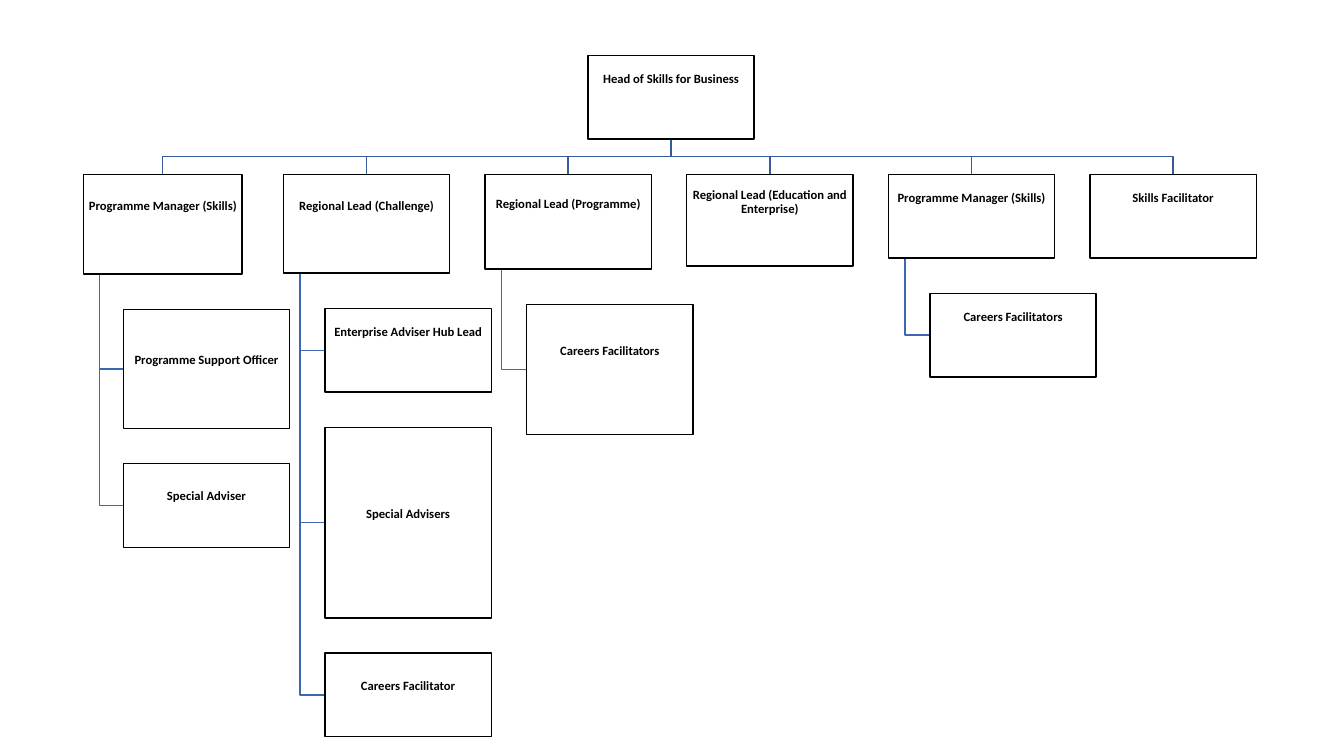
from pptx import Presentation
from pptx.dml.color import RGBColor
from pptx.enum.shapes import MSO_SHAPE
from pptx.enum.text import MSO_ANCHOR, PP_ALIGN
from pptx.util import Inches, Pt

BOX_WIDTH, BOX_HEIGHT, GAP = 1.65, 0.83, 0.35
PITCH = BOX_WIDTH + GAP
FIRST_LEFT, HEAD_LEFT, HEAD_TOP = 0.81, 5.83, 0.55
TEXT_LIFT = 0.18
BLACK, TRUNK_BLUE, BRANCH_BLUE = "000000", "365B9D", "3E67B2"

presentation = Presentation()
presentation.slide_width = Inches(13.33)
presentation.slide_height = Inches(7.5)
slide = presentation.slides.add_slide(presentation.slide_layouts[6])


def outline(shape, color):
    shape.shadow.inherit = False
    shape.fill.background()
    shape.line.color.rgb = RGBColor.from_string(color)
    shape.line.width = Pt(1)


def add_box(label, left, top, width, height, lift):
    box = slide.shapes.add_shape(
        MSO_SHAPE.RECTANGLE, Inches(left), Inches(top), Inches(width), Inches(height))
    outline(box, BLACK)
    frame = box.text_frame
    frame.word_wrap = True
    frame.vertical_anchor = MSO_ANCHOR.MIDDLE
    frame.margin_left = frame.margin_right = frame.margin_top = Inches(0.01)
    frame.margin_bottom = Inches(lift * TEXT_LIFT)
    paragraph = frame.paragraphs[0]
    paragraph.text = label
    paragraph.alignment = PP_ALIGN.CENTER
    paragraph.line_spacing = 0.9
    paragraph.font.name = "Calibri"
    paragraph.font.size = Pt(9)
    paragraph.font.bold = True
    paragraph.font.color.rgb = RGBColor.from_string(BLACK)


teams = [
    ("Programme Manager (Skills)", 0.83, 1.57, 0.99, [
        ("Programme Support Officer", 1.18, 1),
        ("Special Adviser", BOX_HEIGHT, 1)]),
    ("Regional Lead (Challenge)", FIRST_LEFT + PITCH, BOX_WIDTH, 0.98, [
        ("Enterprise Adviser Hub Lead", BOX_HEIGHT, 2),
        ("Special Advisers", 1.89, 1),
        ("Careers Facilitator", BOX_HEIGHT, 1)]),
    ("Regional Lead (Programme)", FIRST_LEFT + 2 * PITCH, BOX_WIDTH, 0.94, [
        ("Careers Facilitators", 1.29, 2)]),
    ("Regional Lead (Education and Enterprise)", FIRST_LEFT + 3 * PITCH, BOX_WIDTH, 0.91, []),
    ("Programme Manager (Skills)", FIRST_LEFT + 4 * PITCH, BOX_WIDTH, BOX_HEIGHT, [
        ("Careers Facilitators", BOX_HEIGHT, 2)]),
    ("Skills Facilitator", FIRST_LEFT + 5 * PITCH, BOX_WIDTH, BOX_HEIGHT, []),
]

head_center = HEAD_LEFT + BOX_WIDTH / 2
head_bottom = HEAD_TOP + BOX_HEIGHT
lead_top = head_bottom + GAP
trunk_y = head_bottom + GAP / 2

boxes = [("Head of Skills for Business", HEAD_LEFT, HEAD_TOP, BOX_WIDTH, BOX_HEIGHT, 2)]
routes = []
for lead, left, width, height, members in teams:
    center = left + width / 2
    boxes.append((lead, left, lead_top, width, height, 2))
    routes.append((TRUNK_BLUE, [(head_center, head_bottom), (head_center, trunk_y),
                                (center, trunk_y), (center, lead_top)]))
    lead_bottom = lead_top + height
    stem_x = left + width * 0.1
    member_left = left + width * 0.25
    member_top = lead_bottom + GAP
    for member, member_height, lift in members:
        middle = member_top + member_height / 2
        boxes.append((member, member_left, member_top, BOX_WIDTH, member_height, lift))
        routes.append((BRANCH_BLUE, [(stem_x, lead_bottom), (stem_x, middle),
                                     (member_left, middle)]))
        member_top += member_height + GAP

for color, points in routes:
    start, *corners = [(Inches(x), Inches(y)) for x, y in points]
    builder = slide.shapes.build_freeform(*start)
    builder.add_line_segments(corners, close=False)
    outline(builder.convert_to_shape(), color)

for box in boxes:
    add_box(*box)

presentation.save("out.pptx")
